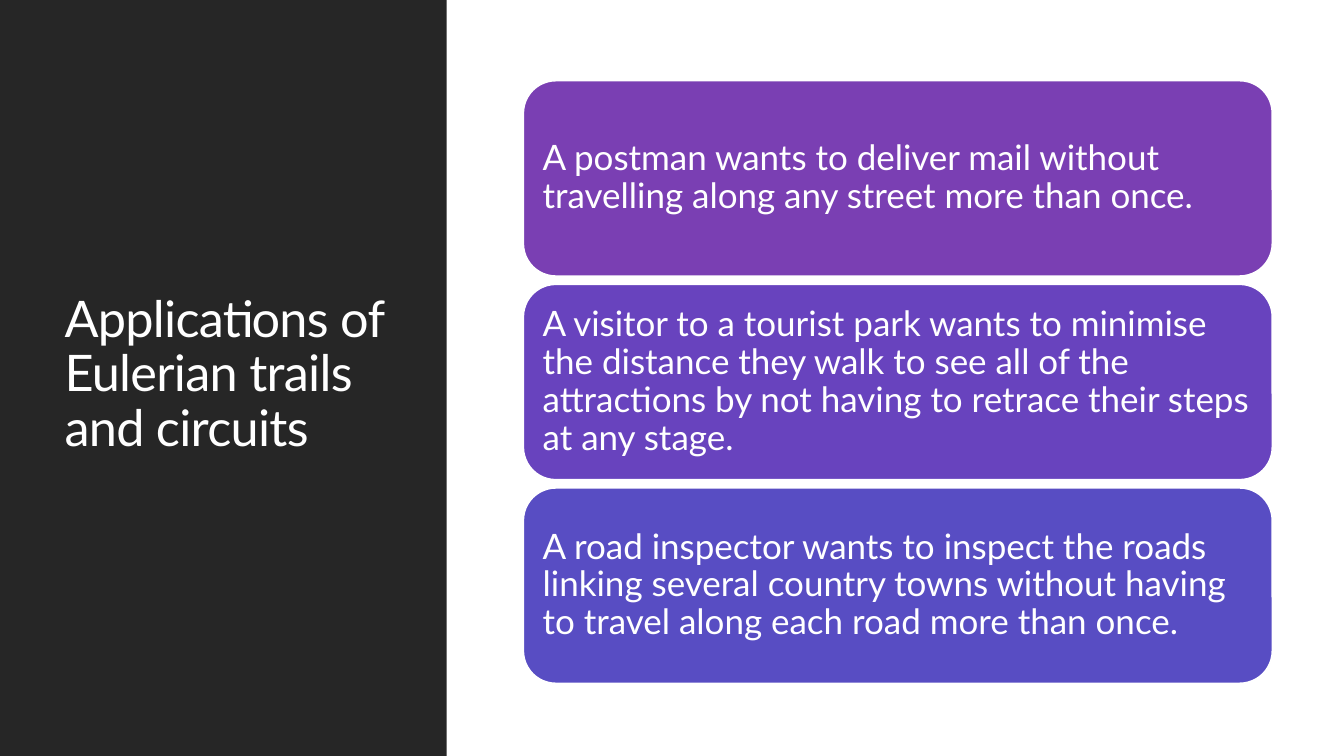
from pptx import Presentation
from pptx.dml.color import RGBColor
from pptx.enum import shapes, text
from pptx.oxml.ns import qn
from pptx.util import Inches, Pt

WHITE = RGBColor(0xFF, 0xFF, 0xFF)
CHARCOAL = RGBColor(0x26, 0x26, 0x26)
PURPLE = RGBColor(0x7A, 0x3F, 0xB3)
VIOLET = RGBColor(0x68, 0x43, 0xBE)
INDIGO = RGBColor(0x58, 0x4D, 0xC3)
FONT = "Lato"

CARD_TOP = 0.8
CARD_PITCH = 2.02
APPLICATIONS = [
    ("A postman wants to deliver mail without travelling along any street "
     "more than once.", PURPLE),
    ("A visitor to a tourist park wants to minimise the distance they walk to "
     "see all of the attractions by not having to retrace their steps at any "
     "stage.", VIOLET),
    ("A road inspector wants to inspect the roads linking several country "
     "towns without having to travel along each road more than once.", INDIGO),
]


def set_text(shape, wording, size):
    frame = shape.text_frame
    frame.text = wording
    frame.word_wrap = True
    frame.auto_size = text.MSO_AUTO_SIZE.NONE
    frame.vertical_anchor = text.MSO_ANCHOR.MIDDLE
    paragraph = frame.paragraphs[0]
    paragraph.alignment = text.PP_ALIGN.LEFT
    paragraph.line_spacing = 0.9
    font = paragraph.runs[0].font
    font.name = FONT
    font.size = Pt(size)
    font.color.rgb = WHITE


def add_filled_shape(slide, kind, left, top, width, height, color):
    shape = slide.shapes.add_shape(
        kind, Inches(left), Inches(top), Inches(width), Inches(height))
    shape.shadow.inherit = False
    shape.fill.solid()
    shape.fill.fore_color.rgb = color
    shape.line.fill.background()
    return shape


def add_title_panel(slide):
    panel = add_filled_shape(
        slide, shapes.MSO_SHAPE.RECTANGLE, 0, 0, 4.43, 7.5, CHARCOAL)
    title = slide.shapes.title
    title.element.addprevious(panel.element)
    title.left, title.top = Inches(0.54), Inches(0.57)
    title.width, title.height = Inches(3.37), Inches(6.31)
    set_text(title, "Applications of Eulerian trails and circuits", 36)
    for properties in title.element.iter(qn("a:rPr")):
        properties.set("spc", "-50")


def add_card(slide, top, wording, color):
    card = add_filled_shape(
        slide, shapes.MSO_SHAPE.ROUNDED_RECTANGLE, 5.19, top, 7.43, 1.94, color)
    card.line.color.rgb = WHITE
    card.line.width = Pt(1.25)
    set_text(card, wording, 25)
    frame = card.text_frame
    frame.margin_left = frame.margin_right = Inches(0.1)
    frame.margin_top = frame.margin_bottom = Inches(0.1)


def main():
    presentation = Presentation()
    presentation.slide_width = Inches(13.33)
    presentation.slide_height = Inches(7.5)
    slide = presentation.slides.add_slide(presentation.slide_layouts[5])
    add_title_panel(slide)
    for index, (wording, color) in enumerate(APPLICATIONS):
        add_card(slide, CARD_TOP + index * CARD_PITCH, wording, color)
    presentation.save("out.pptx")


if __name__ == "__main__":
    main()
